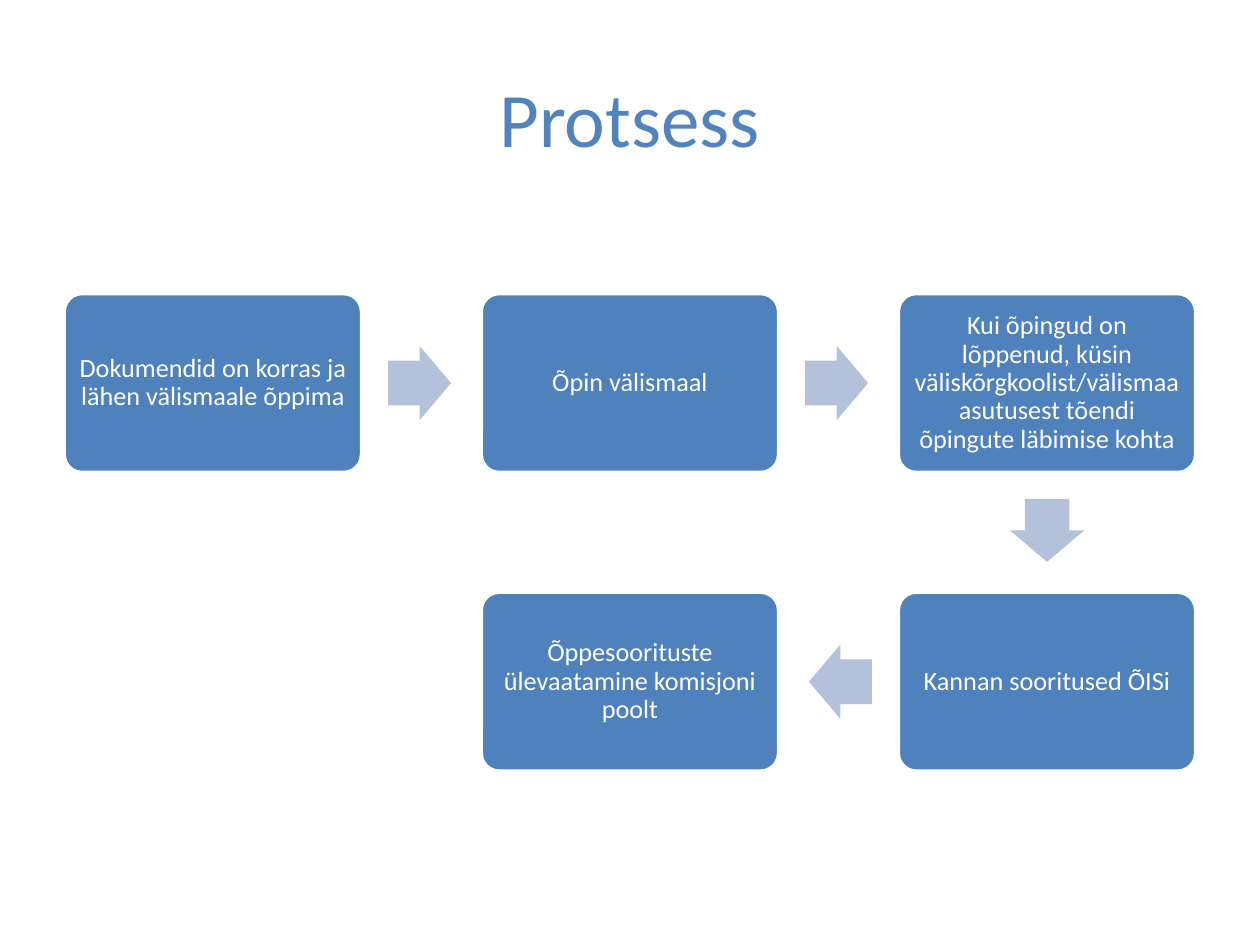
from itertools import pairwise

from pptx import Presentation
from pptx.dml.color import RGBColor
from pptx.enum.shapes import MSO_SHAPE
from pptx.enum.text import MSO_ANCHOR, PP_ALIGN
from pptx.util import Inches, Pt

ROUNDED = MSO_SHAPE.ROUNDED_RECTANGLE
ARROW = MSO_SHAPE.RIGHT_ARROW
MIDDLE = MSO_ANCHOR.MIDDLE
CENTER = PP_ALIGN.CENTER

BOX_WIDTH, BOX_HEIGHT = 2.36, 1.42
COLUMN_STEP, ROW_STEP = 3.31, 2.37
FIRST_LEFT, FIRST_TOP = 0.51, 2.33
ARROW_LENGTH, ARROW_BREADTH, ARROW_GAP = 0.5, 0.59, 0.21

STEPS = [
    (0, 0, "Dokumendid on korras ja lähen välismaale õppima"),
    (1, 0, "Õpin välismaal"),
    (2, 0, "Kui õpingud on lõppenud, küsin väliskõrgkoolist/välismaa "
           "asutusest tõendi õpingute läbimise kohta"),
    (2, 1, "Kannan sooritused ÕISi"),
    (1, 1, "Õppesoorituste ülevaatamine komisjoni poolt"),
]
ROTATIONS = {(1, 0): 0, (0, 1): 90, (-1, 0): 180}


def color(value):
    """Turn a hex string into a colour."""
    return RGBColor.from_string(value)


def set_values(target, values):
    """Set each attribute named in the dict on the target."""
    for name, value in values.items():
        setattr(target, name, value)


class ProcessSlide:
    """Holds the style and the slide, and draws each kind of element."""

    font = "Calibri"
    title_color, box_color, arrow_color, white = "5283BE", "4F81BD", "B3C1DB", "FFFFFF"

    def __init__(self, slide):
        """Keep the slide to draw on."""
        self.slide = slide

    def add_text(self, shape, text, size, text_color, frame_values, spacing):
        """Fill the shape with one centred paragraph."""
        frame = shape.text_frame
        set_values(frame, {"word_wrap": True, "vertical_anchor": MIDDLE, **frame_values})
        paragraph = frame.paragraphs[0]
        paragraph.text = text
        set_values(paragraph, {"alignment": CENTER, "line_spacing": spacing})
        set_values(paragraph.font, {"name": self.font, "size": Pt(size)})
        paragraph.font.color.rgb = color(text_color)

    def title(self, text):
        """Add the slide title."""
        shape = self.slide.shapes.add_textbox(
            Inches(0.5), Inches(0.3), Inches(9), Inches(1.25))
        self.add_text(shape, text, 44, self.title_color, {}, 1.0)

    def preset(self, kind, left, top, width, height, fill, adjustments):
        """Add a filled preset shape without shadow."""
        shape = self.slide.shapes.add_shape(
            kind, Inches(left), Inches(top), Inches(width), Inches(height))
        shape.shadow.inherit = False
        shape.fill.solid()
        shape.fill.fore_color.rgb = color(fill)
        for index, value in enumerate(adjustments):
            shape.adjustments[index] = value
        return shape

    def box(self, column, row, text):
        """Add a process step at a grid position."""
        shape = self.preset(
            ROUNDED, FIRST_LEFT + column * COLUMN_STEP, FIRST_TOP + row * ROW_STEP,
            BOX_WIDTH, BOX_HEIGHT, self.box_color, [0.1])
        shape.line.color.rgb = color(self.white)
        shape.line.width = Pt(2)
        sides = ("left", "top", "right", "bottom")
        margins = {f"margin_{side}": Inches(0.06) for side in sides}
        self.add_text(shape, text, 15, self.white, margins, 0.9)

    def arrow(self, column, row, across, down):
        """Add an arrow leaving a step in the given direction."""
        reach = ARROW_GAP + ARROW_LENGTH / 2
        center_x = FIRST_LEFT + column * COLUMN_STEP + BOX_WIDTH / 2
        center_y = FIRST_TOP + row * ROW_STEP + BOX_HEIGHT / 2
        center_x += across * (BOX_WIDTH / 2 + reach)
        center_y += down * (BOX_HEIGHT / 2 + reach)
        shape = self.preset(
            ARROW, center_x - ARROW_LENGTH / 2, center_y - ARROW_BREADTH / 2,
            ARROW_LENGTH, ARROW_BREADTH, self.arrow_color, [0.6, 0.5])
        shape.line.fill.background()
        shape.rotation = ROTATIONS[across, down]


def main():
    """Build the process slide and save it."""
    presentation = Presentation()
    set_values(presentation, {"slide_width": Inches(10), "slide_height": Inches(7.5)})
    slide = presentation.slides.add_slide(presentation.slide_layouts[6])
    process = ProcessSlide(slide)
    process.title("Protsess")
    for step in STEPS:
        process.box(*step)
    for (column, row, _), (next_column, next_row, _) in pairwise(STEPS):
        process.arrow(column, row, next_column - column, next_row - row)
    presentation.save("out.pptx")


if __name__ == "__main__":
    main()
